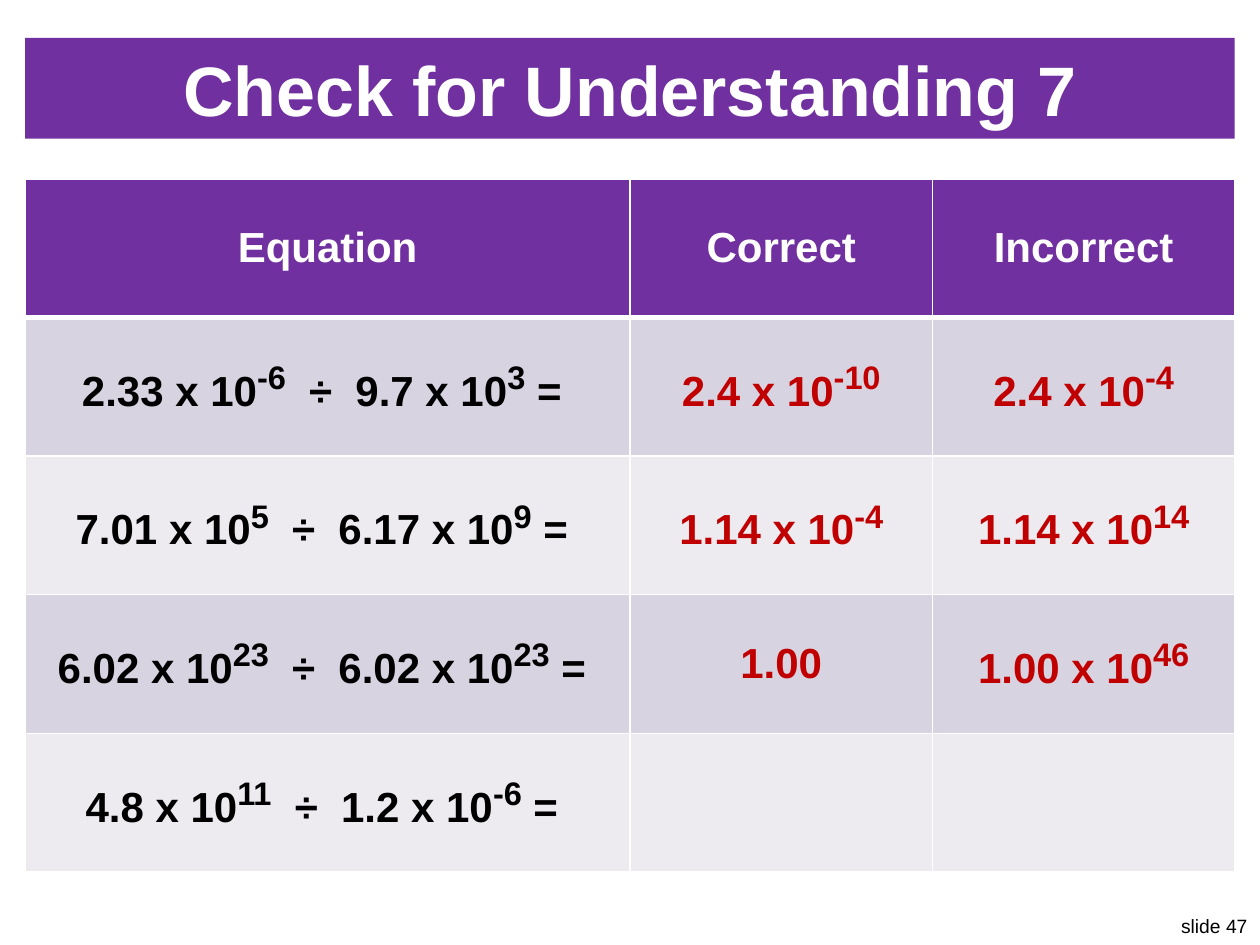
from lxml import etree
from pptx import Presentation
from pptx.dml.color import RGBColor
from pptx.enum.shapes import MSO_SHAPE
from pptx.enum.text import MSO_ANCHOR, PP_ALIGN
from pptx.oxml.ns import qn
from pptx.util import Pt

RECTANGLE = MSO_SHAPE.RECTANGLE
MIDDLE = MSO_ANCHOR.MIDDLE
CENTER = PP_ALIGN.CENTER
RIGHT = PP_ALIGN.RIGHT

COLORS = {
    "purple": "7030A0",
    "dark_band": "D8D3E0",
    "light_band": "EDEAF0",
    "white": "FFFFFF",
    "black": "000000",
    "answer": "C00000",
}
LEFT, WIDTH = 14.4, 691.2
COLUMN_WIDTHS = [345.6, 172.8, 172.8]
ROW_HEIGHT = 79.2
HEADINGS = ["Equation", "Correct", "Incorrect"]
PROBLEMS = [
    ["2.33 x 10^-6^  ÷  9.7 x 10^3^ = ", "2.4 x 10^-10^", "2.4 x 10^-4^"],
    ["7.01 x 10^5^  ÷  6.17 x 10^9^ = ", "1.14 x 10^-4^", "1.14 x 10^14^"],
    ["6.02 x 10^23^  ÷  6.02 x 10^23^ = ", "1.00", "1.00 x 10^46^"],
    ["4.8 x 10^11^  ÷  1.2 x 10^-6^ = ", "", ""],
]


def rgb(name):
    return RGBColor.from_string(COLORS[name])


def write_text(frame, text, size=24, color="black", bold=True, align=CENTER, power_size=32):
    para = frame.paragraphs[0]
    para.alignment = align
    for index, piece in enumerate(text.split("^")):
        if not piece:
            continue
        is_power = index % 2 == 1
        span = para.add_run()
        span.text = piece
        span.font.name = "Arial"
        span.font.size = Pt(power_size if is_power else size)
        span.font.bold = bold
        span.font.color.rgb = rgb(color)
        if is_power:
            span._r.get_or_add_rPr().set("baseline", "30000")


def set_border(cell, side, width):
    line = etree.SubElement(cell._tc.get_or_add_tcPr(), qn(f"a:ln{side}"), w=str(Pt(width)))
    fill = etree.SubElement(line, qn("a:solidFill"))
    etree.SubElement(fill, qn("a:srgbClr"), val=COLORS["white"])


def add_title(page, text):
    box = page.shapes.add_shape(RECTANGLE, Pt(LEFT), Pt(21.6), Pt(WIDTH), Pt(57.6))
    box.shadow.inherit = False
    box.fill.solid()
    box.fill.fore_color.rgb = rgb("purple")
    box.line.fill.background()
    box.text_frame.word_wrap = True
    box.text_frame.vertical_anchor = MIDDLE
    write_text(box.text_frame, text, size=40, color="white")


def add_slide_number(page, text):
    box = page.shapes.add_textbox(Pt(666), Pt(519.12), Pt(54), Pt(20.88))
    box.text_frame.word_wrap = False
    write_text(box.text_frame, text, size=11, bold=False, align=RIGHT)


def fill_cell(cell, text, row, column):
    borders = {"L": 1, "R": 1, "T": 3 if row == 1 else 1, "B": 3 if row == 0 else 1}
    for side, width in borders.items():
        set_border(cell, side, width)
    if row == 0:
        background, color = "purple", "white"
    else:
        background = "dark_band" if row % 2 else "light_band"
        color = "answer" if column else "black"
    cell.fill.solid()
    cell.fill.fore_color.rgb = rgb(background)
    cell.vertical_anchor = MIDDLE
    write_text(cell.text_frame, text, color=color)


def add_problem_table(page, rows):
    frame = page.shapes.add_table(
        len(rows), len(COLUMN_WIDTHS), Pt(LEFT), Pt(102.24), Pt(WIDTH), Pt(ROW_HEIGHT * len(rows))
    )
    table = frame.table
    for column, width in zip(table.columns, COLUMN_WIDTHS):
        column.width = Pt(width)
    for row, texts in enumerate(rows):
        table.rows[row].height = Pt(ROW_HEIGHT)
        for column, text in enumerate(texts):
            fill_cell(table.cell(row, column), text, row, column)


def main():
    deck = Presentation()
    deck.slide_width, deck.slide_height = Pt(720), Pt(540)
    page = deck.slides.add_slide(deck.slide_layouts[6])
    add_slide_number(page, "slide 47")
    add_title(page, "Check for Understanding 7")
    add_problem_table(page, [HEADINGS] + PROBLEMS)
    deck.save("out.pptx")


if __name__ == "__main__":
    main()
